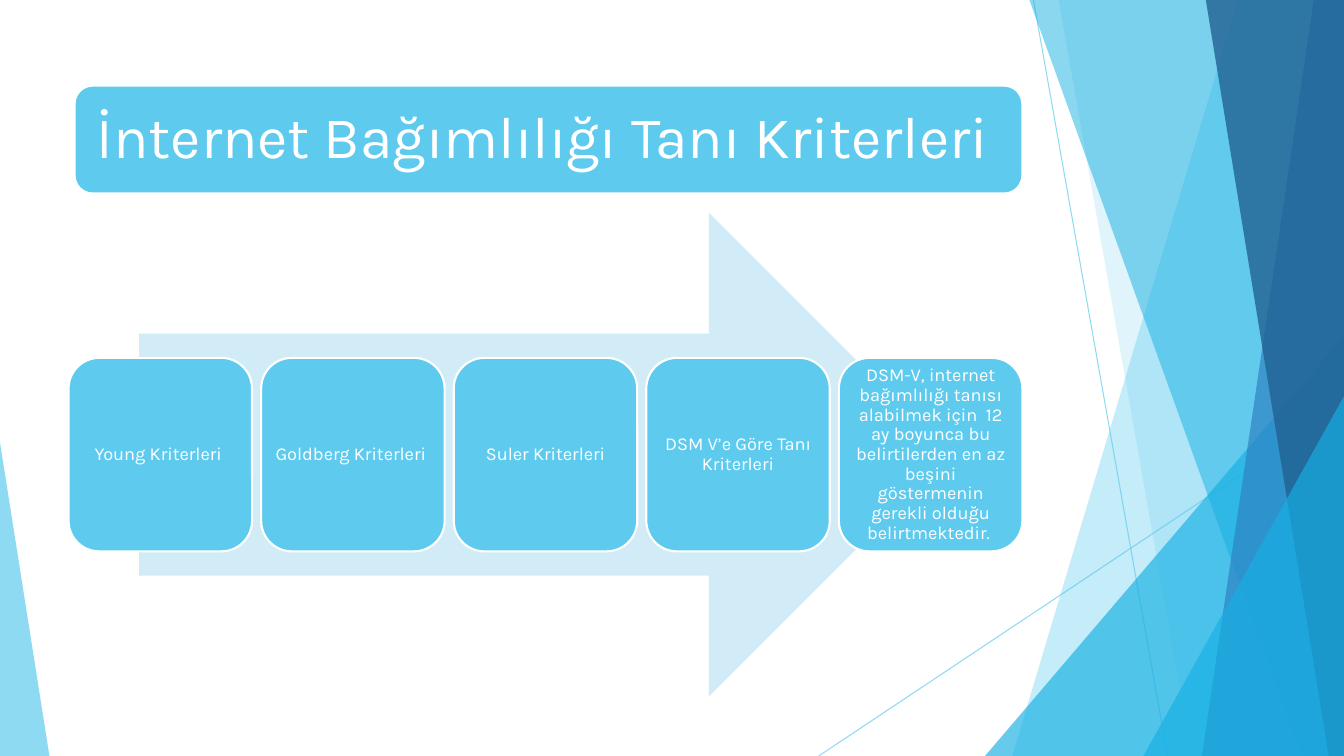
"""Build a slide listing the diagnostic criteria for internet addiction."""
from lxml.etree import SubElement
from pptx import Presentation
from pptx.dml.color import RGBColor
from pptx.enum.shapes import MSO_CONNECTOR, MSO_SHAPE as Shape
from pptx.enum.text import MSO_ANCHOR, PP_ALIGN as Align
from pptx.oxml.ns import qn
from pptx.util import Inches, Pt

COLORS = {
    "sky": "5FCBEF", "azure": "16B0E3", "blue": "2E83C3", "navy": "226292",
    "card": "5ECBEE", "arrow": "D1ECF7", "white": "FFFFFF",
}
TITLE = "İnternet Bağımlılığı Tanı Kriterleri"
CRITERIA = [
    "Young Kriterleri ",
    "Goldberg Kriterleri ",
    "Suler Kriterleri",
    "DSM V’e Göre Tanı Kriterleri",
    "DSM-V, internet bağımlılığı tanısı alabilmek için  12 ay boyunca bu "
    "belirtilerden en az beşini göstermenin gerekli olduğu belirtmektedir. ",
]
WIDTH, HEIGHT = 13.33, 7.5
RAYS = [(10.25, 0, 11.58, HEIGHT), (WIDTH, 4.03, 8.12, HEIGHT)]
FACETS = [
    ("band", (12.28, 10.04), "sky", 36),
    ("band", (10.5, 11.82), "sky", 20),
    ("corner", (9.77, 3.33, 3.56, 1), "azure", 66),
    ("band", (10.21, 12.91), "azure", 50),
    ("band", (13.03, 11.92), "blue", 70),
    ("band", (11.96, 13.18), "navy", 80),
    ("corner", (11.34, 3.93, 1.99, 1), "azure", 66),
    ("corner", (0, 4.39, 0.49, 0), "sky", 70),
]
BANNER = (0.74, 0.85, 9.4, 1.07)
TITLE_BOX = (0.79, 0.9, 9.3, 0.97)
ARROW = (1.38, 2.11, 8.05, 4.8)
CARD_LEFT, CARD_TOP, CARD_WIDTH, CARD_HEIGHT = 0.68, 3.55, 1.82, 1.92
CARD_STEP = 1.91
ROUNDING = 0.167


def rgb(color):
    return RGBColor.from_string(COLORS[color])


def set_opacity(part, percent):
    for color in part._element.spPr.iter(qn("a:srgbClr")):
        SubElement(color, qn("a:alpha")).set("val", str(percent * 1000))


def paint(part, fill, outline=None):
    part.shadow.inherit = False
    part.fill.solid()
    part.fill.fore_color.rgb = rgb(fill)
    if outline:
        part.line.color.rgb = rgb(outline)
        part.line.width = Pt(1.5)
    else:
        part.line.fill.background()


def add_preset(slide, preset, box, adjustments, fill, outline=None):
    part = slide.shapes.add_shape(preset, *map(Inches, box))
    for index, value in enumerate(adjustments):
        part.adjustments[index] = value
    paint(part, fill, outline)
    return part


def write(part, text, size, align, inset):
    frame = part.text_frame
    frame.text = text
    margins = {f"margin_{side}": Inches(inset) for side in ("left", "top", "right", "bottom")}
    paragraph = frame.paragraphs[0]
    formats = [
        (frame, {"word_wrap": True, "vertical_anchor": MSO_ANCHOR.MIDDLE, **margins}),
        (paragraph, {"alignment": align, "line_spacing": 0.9}),
        (paragraph.runs[0].font, {"name": "Karla", "size": Pt(size), "bold": False}),
    ]
    for target, values in formats:
        for name, value in values.items():
            setattr(target, name, value)
    paragraph.runs[0].font.color.rgb = rgb("white")


def add_ray(slide, ends):
    ray = slide.shapes.add_connector(MSO_CONNECTOR.STRAIGHT, *map(Inches, ends))
    ray.line.color.rgb = rgb("sky")
    ray.line.width = Pt(0.75)
    set_opacity(ray, 70)
    SubElement(ray._element.spPr, qn("a:effectLst"))


def add_facet(slide, kind, geometry, color, opacity):
    if kind == "band":
        top_x, bottom_x = geometry
        corners = [(WIDTH, 0), (WIDTH, HEIGHT), (bottom_x, HEIGHT)]
        builder = slide.shapes.build_freeform(Inches(top_x), 0)
        builder.add_line_segments([(Inches(x), Inches(y)) for x, y in corners])
        facet = builder.convert_to_shape()
        paint(facet, color)
    else:
        left, top, width, apex = geometry
        box = (left, top, width, HEIGHT - top)
        facet = add_preset(slide, Shape.ISOSCELES_TRIANGLE, box, [apex], color)
    set_opacity(facet, opacity)


def add_title(slide):
    add_preset(slide, Shape.ROUNDED_RECTANGLE, BANNER, [ROUNDING], "card", "white")
    title = slide.shapes.title
    for name, value in zip(("left", "top", "width", "height"), TITLE_BOX):
        setattr(title, name, Inches(value))
    write(title, TITLE, 42, Align.LEFT, 0.17)
    slide.shapes._spTree.append(title._element)


def add_criteria(slide):
    add_preset(slide, Shape.RIGHT_ARROW, ARROW, [0.5, 0.5], "arrow")
    for index, criterion in enumerate(CRITERIA):
        box = (CARD_LEFT + index * CARD_STEP, CARD_TOP, CARD_WIDTH, CARD_HEIGHT)
        card = add_preset(slide, Shape.ROUNDED_RECTANGLE, box, [ROUNDING], "card", "white")
        write(card, criterion, 13, Align.CENTER, 0.05)


def main():
    deck = Presentation()
    deck.slide_width, deck.slide_height = Inches(WIDTH), Inches(HEIGHT)
    slide = deck.slides.add_slide(deck.slide_layouts[5])
    for ends in RAYS:
        add_ray(slide, ends)
    for facet in FACETS:
        add_facet(slide, *facet)
    add_title(slide)
    add_criteria(slide)
    deck.save("out.pptx")


if __name__ == "__main__":
    main()
